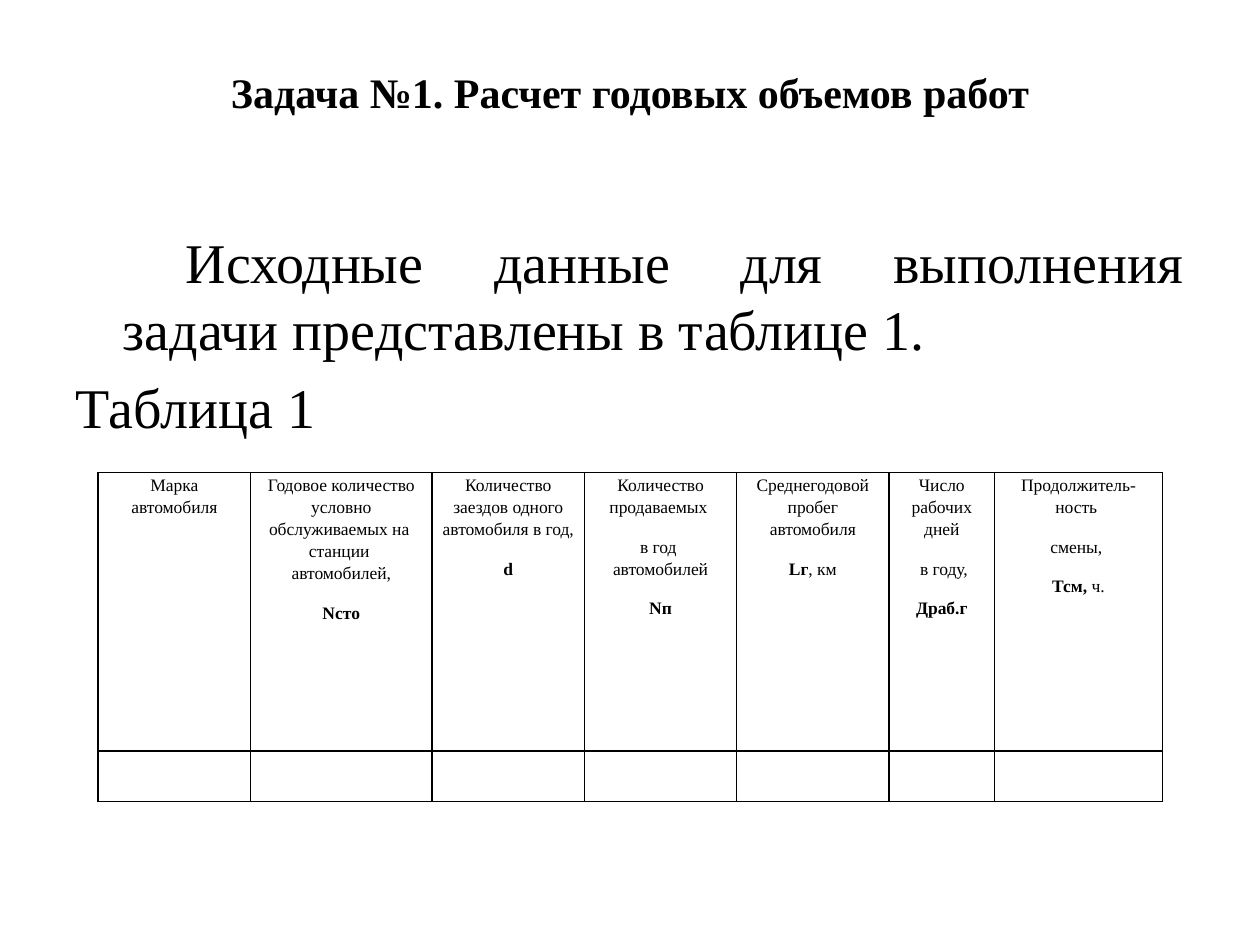
from copy import deepcopy

from pptx import Presentation, util as u
from pptx.dml.color import RGBColor
from pptx.enum import text
from pptx.oxml import parse_xml
from pptx.oxml.ns import nsdecls, qn

BLACK = RGBColor(0, 0, 0)
MID = text.PP_ALIGN.CENTER
WIDTHS = [3.07, 3.66, 3.07, 3.07, 3.07, 2.13, 3.38]
ROWS = [5.61, 1.02]
HEADS = [
    ["Марка автомобиля"],
    ["Годовое количество условно обслуживаемых на  станции  автомобилей,",
     "Ncтo|"],
    ["Количество заездов одного автомобиля в год, ", "d|"],
    ["Количество продаваемых ", "в год  автомобилей", "Nп|"],
    ["Среднегодовой пробег автомобиля", "Lг|, км"],
    ["Число рабочих дней", " в году,", "Драб.г|"],
    ["Продолжитель-ность ", "смены, ", "Тсм, |ч."],
]


class Deck:
    """Holds the style and the current slide."""

    def __init__(self):
        self.face = "Times New Roman"
        self.prs = Presentation()
        self.prs.slide_width, self.prs.slide_height = u.Cm(25.4), u.Cm(19.05)
        self.slide = self.prs.slides.add_slide(self.prs.slide_layouts[1])

    def place(self, shape, x, y, w, h):
        """Move and size a shape."""
        shape.left, shape.top = u.Cm(x), u.Cm(y)
        shape.width, shape.height = u.Cm(w), u.Cm(h)

    def style(self, run, size, bold=False):
        """Format one run."""
        font = run.font
        font.name, font.size, font.bold = self.face, u.Pt(size), bold
        font.color.rgb = BLACK

    def title(self, words, *box):
        """Fill the title, with an open line below the words."""
        shape = self.slide.shapes.title
        self.place(shape, *box)
        frame = shape.text_frame
        frame.vertical_anchor = text.MSO_ANCHOR.MIDDLE
        para = frame.paragraphs[0]
        para.text = words + "\v"
        para.alignment = MID
        self.style(para.runs[0], 24, True)
        look = para.runs[0]._r.find(qn("a:rPr"))
        para._p.find(qn("a:br")).append(deepcopy(look))
        end = deepcopy(look)
        end.tag = qn("a:endParaRPr")
        para._p.append(end)

    def body(self, lines, *box):
        """Fill the body with justified lines without bullets."""
        shape = self.slide.placeholders[1]
        self.place(shape, *box)
        frame = shape.text_frame
        frame.text = "\n".join(lines)
        for para in frame.paragraphs:
            para.alignment = text.PP_ALIGN.JUSTIFY
            props = para._p.get_or_add_pPr()
            props.set("marL", str(u.Cm(0.95)))
            props.set("indent", str(u.Cm(-0.95)))
            props.append(parse_xml(f"<a:buNone {nsdecls('a')}/>"))
            for run in para.runs:
                self.style(run, 32)

    def border(self, cell):
        """Draw thin black lines around a cell."""
        props = cell._tc.get_or_add_tcPr()
        for i, side in enumerate(("lnL", "lnR", "lnT", "lnB")):
            props.insert(i, parse_xml(
                f'<a:{side} {nsdecls("a")} w="{u.Pt(1)}"><a:solidFill>'
                f'<a:srgbClr val="{BLACK}"/></a:solidFill></a:{side}>'))

    def label(self, cell, lines):
        """Put lines into a cell; the part before a bar is bold."""
        cell.text_frame.text = "\n".join(lines)
        for para, line in zip(cell.text_frame.paragraphs, lines):
            para.alignment = MID
            para.line_spacing, para.space_after = 1.15, u.Pt(10)
            strong, _, plain = line.rpartition("|")
            para.text = strong or plain
            self.style(para.runs[0], 10, bool(strong))
            if strong and plain:
                run = para.add_run()
                run.text = plain
                self.style(run, 10)

    def table(self, heads, widths, rows, x, y):
        """Add a ruled table with a head row and open rows below."""
        grid = self.slide.shapes.add_table(
            len(rows), len(widths), u.Cm(x), u.Cm(y),
            u.Cm(sum(widths)), u.Cm(sum(rows))).table
        for col, w in zip(grid.columns, widths):
            col.width = u.Cm(w)
        for row, h in zip(grid.rows, rows):
            row.height = u.Cm(h)
        for cell in grid.iter_cells():
            cell.margin_left = cell.margin_right = u.Cm(0.18)
            cell.margin_top = cell.margin_bottom = 0
            cell.fill.background()
            self.border(cell)
        for cell, lines in zip(grid.rows[0].cells, heads):
            self.label(cell, lines)


def main():
    """Build the slide."""
    deck = Deck()
    deck.title("Задача №1. Расчет годовых объемов работ",
               1.27, 0.76, 22.86, 3.18)
    deck.body(["\t\tИсходные данные для выполнения задачи "
               "представлены в таблице 1.", "Таблица 1"],
              1.27, 4.45, 22.86, 12.57)
    deck.table(HEADS, WIDTHS, ROWS, 1.98, 9.53)
    deck.prs.save("out.pptx")


if __name__ == "__main__":
    main()
